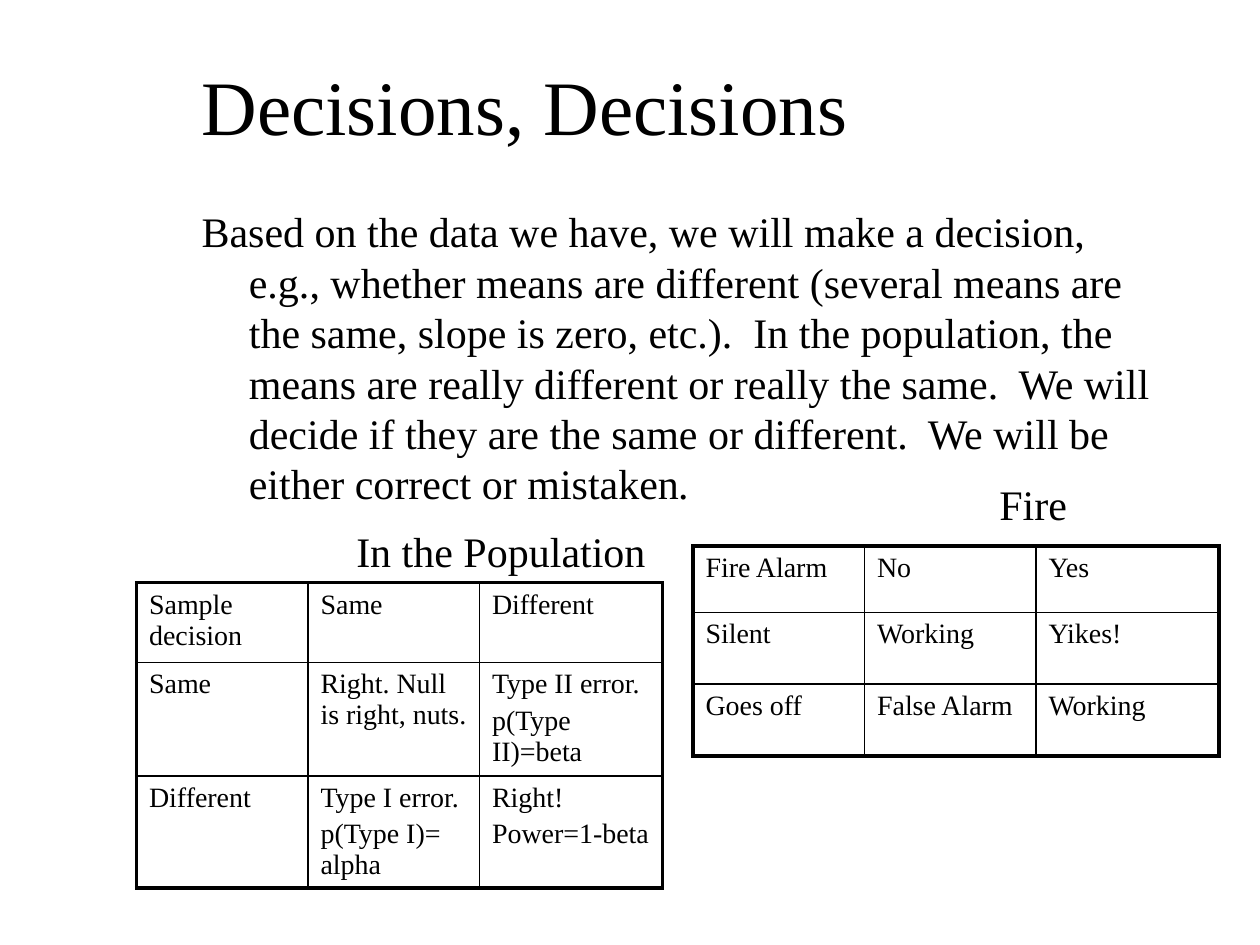
from lxml import etree
from pptx import Presentation
from pptx.dml.color import RGBColor
from pptx.enum.text import MSO_ANCHOR as ANCHOR, MSO_AUTO_SIZE as AUTO, PP_ALIGN as ALIGN
from pptx.oxml import parse_xml
from pptx.oxml.ns import nsdecls, qn
from pptx.util import Pt

FONT = "Times New Roman"
BLACK = "000000"


def style(tf, size, color=BLACK):
    """Format every run of a text frame."""
    for p in tf.paragraphs:
        p.alignment = ALIGN.LEFT
        for r in p.runs:
            r.font.name = FONT
            r.font.size = Pt(size)
            r.font.color.rgb = RGBColor.from_string(color)


def set_border(cell, side, width, color=BLACK):
    """Draw one side (L, R, T or B) of a table cell."""
    cell._tc.get_or_add_tcPr().append(parse_xml(
        f'<a:ln{side} {nsdecls("a")} w="{Pt(width)}"><a:solidFill>'
        f'<a:srgbClr val="{color}"/></a:solidFill></a:ln{side}>'))


prs = Presentation()
prs.slide_width, prs.slide_height = Pt(720), Pt(540)
s = prs.slides.add_slide(prs.slide_layouts[1])

# Title
title = s.shapes.title
title.left, title.top, title.width, title.height = Pt(108), Pt(24), Pt(558), Pt(72)
tf = title.text_frame
tf.text = "Decisions, Decisions"
tf.vertical_anchor = ANCHOR.MIDDLE
tf.auto_size = AUTO.NONE
style(tf, 44)

# Body paragraph with hanging indent and no bullet
body = s.placeholders[1]
body.left, body.top, body.width, body.height = Pt(108), Pt(114), Pt(558), Pt(366)
tf = body.text_frame
tf.auto_size = AUTO.NONE
tf.text = (
    "Based on the data we have, we will make a decision, e.g., whether means are "
    "different (several means are the same, slope is zero, etc.).  In the population, "
    "the means are really different or really the same.  We will decide if they are "
    "the same or different.  We will be either correct or mistaken")
p = tf.paragraphs[0]
p.add_run().text = "."
p.runs[-1].font.italic = True
pPr = p._p.get_or_add_pPr()
pPr.set("marL", str(Pt(27)))
pPr.set("indent", str(Pt(-27)))
etree.SubElement(pPr, qn("a:buNone"))
p.space_before = Pt(0)
style(tf, 24)

# Decision tables: left, top, row heights, cell texts
tables = [
    (78, 333, (45.5, 65, 64), [
        ["Sample decision", "Same", "Different"],
        ["Same", "Right. Null is right, nuts.", "Type II error.\np(Type II)=beta"],
        ["Different", "Type I error.\np(Type I)= alpha", "Right!\nPower=1-beta"]]),
    (396, 312, (38, 41, 41), [
        ["Fire Alarm", "No", "Yes"],
        ["Silent", "Working", "Yikes!"],
        ["Goes off", "False Alarm", "Working"]]),
]
col_widths = (98, 98, 104.5)
for left, top, heights, rows in tables:
    table = s.shapes.add_table(3, 3, Pt(left), Pt(top), Pt(sum(col_widths)),
                               Pt(sum(heights))).table
    table.first_row = table.horz_banding = False
    for col, width in zip(table.columns, col_widths):
        col.width = Pt(width)
    for i, (height, texts) in enumerate(zip(heights, rows)):
        table.rows[i].height = Pt(height)
        for j, text in enumerate(texts):
            cell = table.cell(i, j)
            cell.text = text
            style(cell.text_frame, 16)
            for p in cell.text_frame.paragraphs[1:]:
                p.space_before = Pt(3)
            # Thick outer frame, thin inner rules
            for side, outer in (("L", j == 0), ("R", j == 2), ("T", i == 0), ("B", i == 2)):
                set_border(cell, side, 2.25 if outer else 1)
            cell.fill.background()

# Table headings
for text, left, top, width in (("In the Population", 196.5, 297, 184),
                               ("Fire", 564, 270, 56)):
    tf = s.shapes.add_textbox(Pt(left), Pt(top), Pt(width), Pt(36)).text_frame
    tf.text = text
    tf.word_wrap = True
    tf.auto_size = AUTO.SHAPE_TO_FIT_TEXT
    style(tf, 24)

prs.save("out.pptx")
